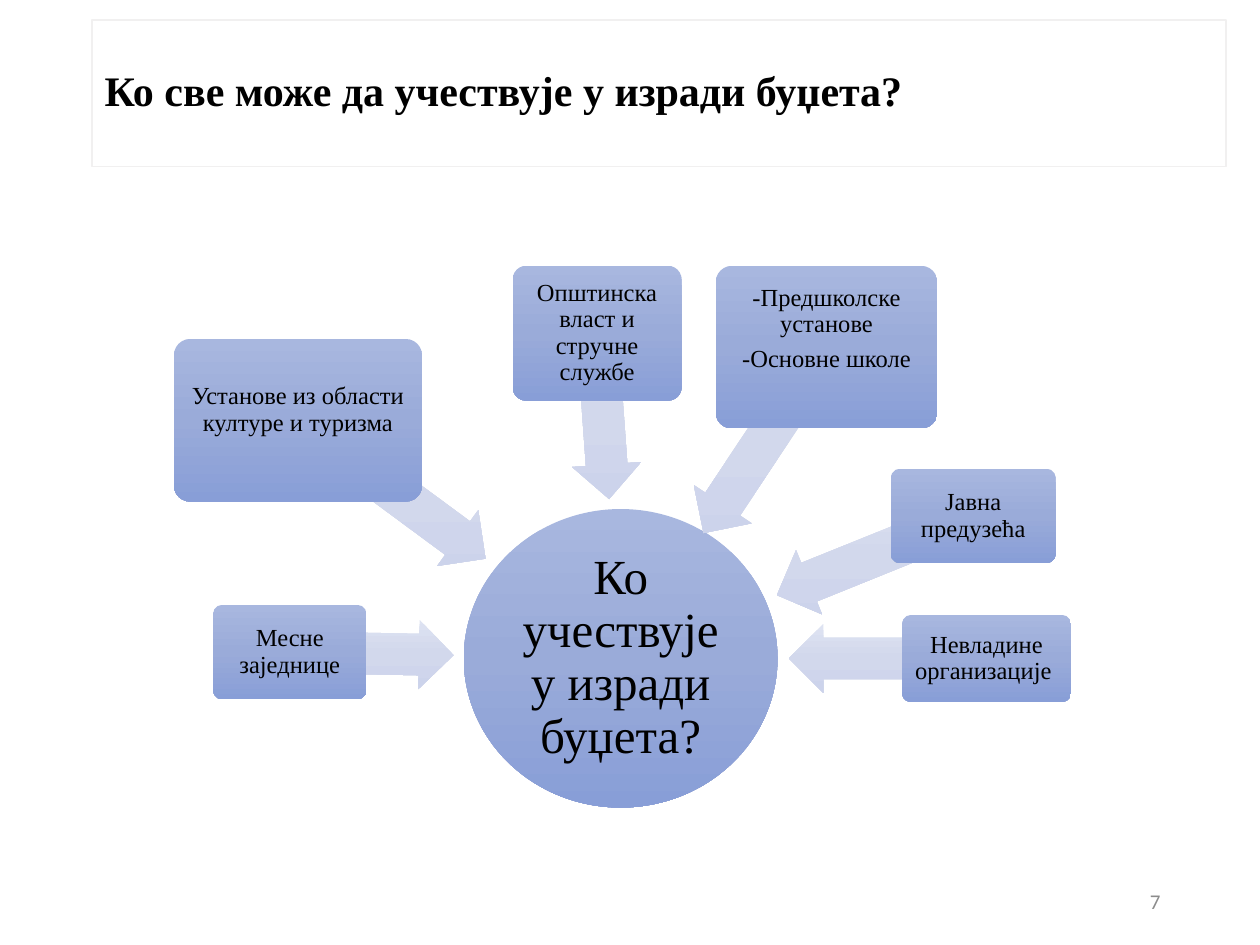
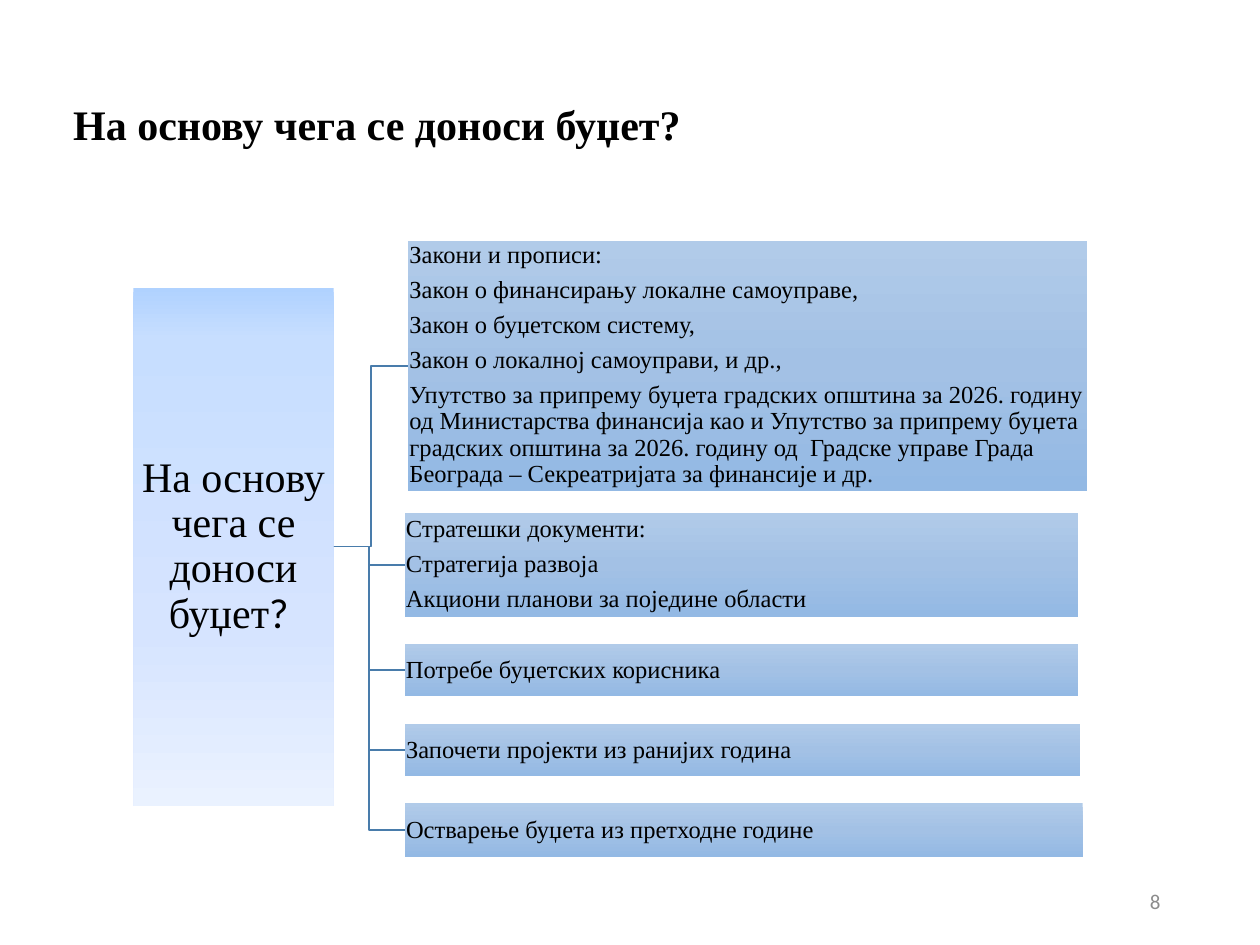
from math import atan2, cos, degrees, sin

from lxml.etree import SubElement
from pptx import Presentation
from pptx.dml.color import RGBColor
from pptx.enum.shapes import MSO_CONNECTOR as CONNECTOR, MSO_SHAPE as SHAPE
from pptx.enum.text import MSO_ANCHOR as ANCHOR, MSO_AUTO_SIZE as AUTO_SIZE, PP_ALIGN as ALIGN
from pptx.oxml.ns import qn
from pptx.util import Pt

BLACK = RGBColor(0x00, 0x00, 0x00)
GREY = RGBColor(0x8C, 0x8C, 0x8C)
FRAME = RGBColor(0xF1, 0xF0, 0xF0)
LINK = RGBColor(0x49, 0x7C, 0xAB)

# Gradients run from top to bottom: (position in percent, colour)
NODE = [(0, RGBColor(0xA8, 0xB7, 0xDF)), (50, RGBColor(0x9A, 0xAB, 0xD9)),
        (100, RGBColor(0x88, 0x9E, 0xD7))]
ARROW = [(0, RGBColor(0xDE, 0xE3, 0xF2)), (50, RGBColor(0xD2, 0xD8, 0xEC)),
         (100, RGBColor(0xCC, 0xD3, 0xEB))]
BASIS = [(0, RGBColor(0xB1, 0xCB, 0xE9)), (50, RGBColor(0xA3, 0xC1, 0xE5)),
         (100, RGBColor(0x93, 0xB9, 0xE4))]
PANEL = [(0, RGBColor(0xB0, 0xD2, 0xFF)), (10, RGBColor(0xC7, 0xDE, 0xFF)),
         (66, RGBColor(0xD6, 0xE4, 0xFF)), (100, RGBColor(0xEA, 0xF2, 0xFF))]

SERIF, SANS = "Times New Roman", "Calibri"
ARROW_HEIGHT = 39.6


class Deck:
    def __init__(self, prs):
        self.prs = prs
        self.slide = None

    def add_slide(self, title, box, number):
        self.slide = self.prs.slides.add_slide(self.prs.slide_layouts[5])
        sp = self.slide.shapes.title
        sp.left, sp.top, sp.width, sp.height = map(Pt, box)
        self.set_text(sp, title, 24, ALIGN.LEFT, inset=7.2, after=0, bold=True)
        tb = self.slide.shapes.add_textbox(Pt(508.3), Pt(500.4), Pt(162), Pt(28.8))
        self.set_text(tb, str(number), 12, ALIGN.RIGHT, inset=7.2, after=0,
                      font=SANS, color=GREY, spacing=1)
        return sp

    def set_text(self, sp, text, size, align=ALIGN.CENTER, inset=2, lift=0, after=0.35,
                 anchor=ANCHOR.MIDDLE, font=SERIF, color=BLACK, bold=False, spacing=0.9):
        """Fill a shape with text; lift adds room below, after is a share of the size."""
        tf = sp.text_frame
        tf.text = text
        tf.word_wrap = True
        tf.auto_size = AUTO_SIZE.NONE
        tf.vertical_anchor = anchor
        tf.margin_left = tf.margin_right = tf.margin_top = Pt(inset)
        tf.margin_bottom = Pt(inset + lift)
        for p in tf.paragraphs:
            p.alignment = align
            p.line_spacing = spacing
            p.space_after = Pt(size * after)
            for r in p.runs:
                r.font.name, r.font.size = font, Pt(size)
                r.font.bold, r.font.color.rgb = bold, color

    def shape(self, kind, box, stops):
        sp = self.slide.shapes.add_shape(kind, *map(Pt, box))
        sp.shadow.inherit = False
        sp.line.fill.background()
        sp.fill.gradient()
        sp.fill.gradient_angle = 270
        grad = sp._element.spPr.find(qn("a:gradFill"))
        grad.set("rotWithShape", "0")
        gs_list = grad.find(qn("a:gsLst"))
        gs_list.clear()
        for pos, color in stops:
            gs = SubElement(gs_list, qn("a:gs"), pos=str(pos * 1000))
            SubElement(gs, qn("a:srgbClr"), val=str(color))
        return sp

    def arrow(self, start, target, length):
        """Block arrow of the given length from start towards target."""
        (x, y), (tx, ty) = start, target
        angle = atan2(ty - y, tx - x)
        cx, cy = x + cos(angle) * length / 2, y + sin(angle) * length / 2
        sp = self.shape(SHAPE.LEFT_ARROW, (cx - length / 2, cy - ARROW_HEIGHT / 2,
                                           length, ARROW_HEIGHT), ARROW)
        sp.adjustments[0], sp.adjustments[1] = 0.6, 0.5
        sp.rotation = (degrees(angle) + 180) % 360

    def node(self, text, box, lift):
        sp = self.shape(SHAPE.ROUNDED_RECTANGLE, box, NODE)
        sp.adjustments[0] = 0.1
        self.set_text(sp, text, 14, lift=lift)

    def elbow(self, source, target):
        cxn = self.slide.shapes.add_connector(CONNECTOR.ELBOW, 0, 0, 0, 0)
        cxn.begin_connect(source, 3)
        cxn.end_connect(target, 1)
        cxn.line.color.rgb = LINK
        cxn.line.width = Pt(1)
        SubElement(cxn._element.spPr, qn("a:effectLst"))


def center(box):
    x, y, w, h = box
    return x + w / 2, y + h / 2


def participants(deck):
    title = deck.add_slide("Ко све може да учествује у изради буџета?",
                           (52.6, 11.5, 648, 83.5), 7)
    title.line.color.rgb = FRAME
    title.line.width = Pt(0.75)

    hub_box = (265, 290.9, 179.3, 170.6)
    hub = deck.shape(SHAPE.OVAL, hub_box, NODE)
    deck.set_text(hub, "Ко учествује у изради буџета?", 28)

    # text, box, arrow length, lift
    nodes = [
        ("Месне заједнице", (121.7, 345.6, 87.8, 54), 93.6, 0),
        ("Установе из области културе и туризма", (99.4, 193.7, 141.8, 92.9), 133.2, 11.5),
        ("Општинска власт и стручне службе", (293, 151.9, 96.5, 77), 95, 0),
        ("-Предшколске установе\n-Основне школе", (409, 151.9, 126.7, 92.9), 127.4, 20.5),
        ("Јавна предузећа", (509, 267.8, 94.3, 54), 121, 0),
        ("Невладине организације ", (515.5, 351.4, 96.5, 49.7), 113, 0),
    ]
    for text, box, length, lift in nodes:
        deck.arrow(center(box), center(hub_box), length)
        deck.node(text, box, lift)


def foundations(deck):
    deck.add_slide("На основу чега се доноси буџет?", (34.6, 38.9, 648, 67), 8)

    panel = deck.shape(SHAPE.RECTANGLE, (76.2, 164.4, 114.5, 295.9), PANEL)
    deck.set_text(panel, "На основу чега се доноси буџет", 24)
    r = panel.text_frame.paragraphs[0].add_run()
    r.text = "? "
    r.font.name, r.font.size, r.font.color.rgb = SANS, Pt(24), BLACK

    laws = "\n".join([
        "Закони и прописи:",
        "Закон о финансирању локалне самоуправе,",
        "Закон о буџетском систему,",
        "Закон о локалној самоуправи, и др.,",
        "Упутство за припрему буџета градских општина за 2026. годину од Министарства "
        "финансија као и Упутство за припрему буџета градских општина за 2026. годину од  "
        "Градске управе Града Београда – Секреатријата за финансије и др.",
    ])
    strategy = "Стратешки документи:\nСтратегија развоја\nАкциони планови за поједине области"
    bases = [
        (laws, (233.3, 137.5, 388, 143.3), ANCHOR.TOP),
        (strategy, (231.3, 293, 385, 59.5), ANCHOR.MIDDLE),
        ("Потребе буџетских корисника", (231.3, 368, 385, 30), ANCHOR.MIDDLE),
        ("Започети пројекти из ранијих година", (231.3, 413.7, 386, 30), ANCHOR.MIDDLE),
        ("Остварење буџета из претходне године", (231.3, 459, 387.4, 31), ANCHOR.MIDDLE),
    ]
    for text, box, anchor in bases:
        sp = deck.shape(SHAPE.RECTANGLE, box, BASIS)
        deck.set_text(sp, text, 14, ALIGN.LEFT, inset=0.7, anchor=anchor)
        deck.elbow(panel, sp)


def main():
    prs = Presentation()
    prs.slide_width, prs.slide_height = Pt(720), Pt(540)
    deck = Deck(prs)
    participants(deck)
    foundations(deck)
    prs.save("out.pptx")


if __name__ == "__main__":
    main()
